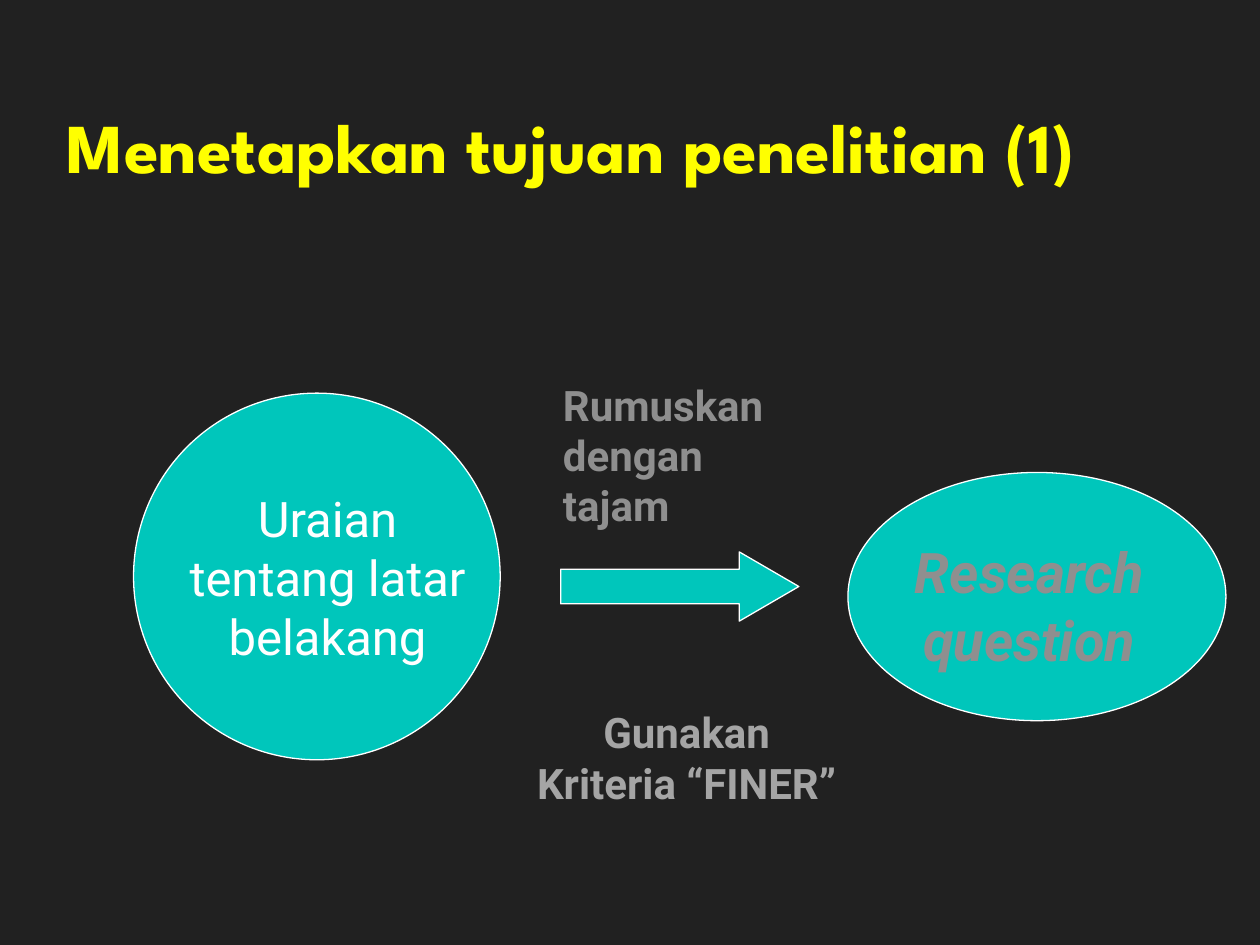
"""Build the slide on setting research objectives."""
from dataclasses import dataclass

from lxml.etree import SubElement
from pptx import Presentation
from pptx.dml.color import RGBColor
from pptx.enum.shapes import MSO_SHAPE
from pptx.enum.text import MSO_ANCHOR, MSO_AUTO_SIZE, PP_ALIGN
from pptx.oxml.ns import qn
from pptx.slide import Slide
from pptx.util import Inches, Pt

Box = tuple[float, float, float, float]
TEAL, WHITE, YELLOW = "00C6BB", "FFFFFF", "FFFF00"
GRAY, LIGHT_GRAY, DARK = "8F8F8F", "A5A5A5", "212121"


@dataclass
class Node:
    kind: MSO_SHAPE
    box: Box
    adjustments: tuple[float, ...] = ()


@dataclass
class Label:
    lines: tuple[str, ...]
    box: Box
    size: int
    color: str
    bold: bool = True
    italic: bool = False
    align: PP_ALIGN = PP_ALIGN.CENTER
    wrap: bool = True


NODES = [
    Node(MSO_SHAPE.OVAL, (1.06, 3.12, 2.91, 2.91)),
    Node(MSO_SHAPE.OVAL, (6.73, 3.75, 3, 1.97)),
    Node(MSO_SHAPE.RIGHT_ARROW, (4.45, 4.38, 1.89, 0.55), (0.5, 0.86)),
]
LABELS = [
    Label(("Uraian tentang latar belakang",), (1.3, 3.83, 2.6, 1.5), 28, WHITE, bold=False),
    Label(("Gunakan", "Kriteria “FINER”"), (3.98, 5.56, 2.94, 0.9), 24, LIGHT_GRAY, wrap=False),
    Label(("Research question",), (6.97, 4.22, 2.4, 1.17), 32, GRAY, italic=True),
    Label(("Rumuskan dengan tajam",), (4.37, 2.96, 2.2, 1.3), 24, GRAY, align=PP_ALIGN.LEFT),
]


def paint(target, color: str) -> None:
    target.solid()
    target.fore_color.rgb = RGBColor.from_string(color)


def style_font(font, name: str, size: int, color: str, bold: bool, italic: bool = False) -> None:
    font.name, font.size, font.bold, font.italic = name, Pt(size), bold, italic
    paint(font.fill, color)


def add_text_shadow(font_element) -> None:
    effects = SubElement(font_element, qn("a:effectLst"))
    shadow = SubElement(effects, qn("a:outerShdw"), blurRad="38100", dist="38100", dir="2700000")
    SubElement(shadow, qn("a:srgbClr"), val="000000")
    font_element.find(qn("a:latin")).addprevious(effects)


def set_title(slide: Slide, text: str, box: Box) -> None:
    sp = slide.shapes.title
    sp.left, sp.top, sp.width, sp.height = map(Inches, box)
    tf = sp.text_frame
    tf.auto_size = MSO_AUTO_SIZE.NONE
    tf.vertical_anchor = MSO_ANCHOR.BOTTOM
    p = tf.paragraphs[0]
    p.alignment = PP_ALIGN.LEFT
    r = p.add_run()
    r.text = text
    style_font(r.font, "League Spartan", 40, YELLOW, bold=True)
    add_text_shadow(r._r.get_or_add_rPr())


def add_node(slide: Slide, node: Node) -> None:
    sp = slide.shapes.add_shape(node.kind, *map(Inches, node.box))
    sp.shadow.inherit = False
    paint(sp.fill, TEAL)
    paint(sp.line.fill, WHITE)
    sp.line.width = Pt(0.75)
    for i, value in enumerate(node.adjustments):
        sp.adjustments[i] = value


def add_label(slide: Slide, label: Label) -> None:
    tf = slide.shapes.add_textbox(*map(Inches, label.box)).text_frame
    tf.word_wrap = label.wrap
    tf.auto_size = MSO_AUTO_SIZE.SHAPE_TO_FIT_TEXT
    tf.text = "\n".join(label.lines)
    for p in tf.paragraphs:
        p.alignment = label.align
        style_font(p.font, "Roboto", label.size, label.color, label.bold, label.italic)


def main() -> None:
    prs = Presentation()
    prs.slide_width, prs.slide_height = Inches(10), Inches(7.5)
    s = prs.slides.add_slide(prs.slide_layouts[5])
    paint(s.background.fill, DARK)
    set_title(s, "Menetapkan tujuan penelitian (1)", (0.43, 0.28, 9.21, 1.26))
    for node in NODES:
        add_node(s, node)
    for label in LABELS:
        add_label(s, label)
    prs.save("out.pptx")


if __name__ == "__main__":
    main()
